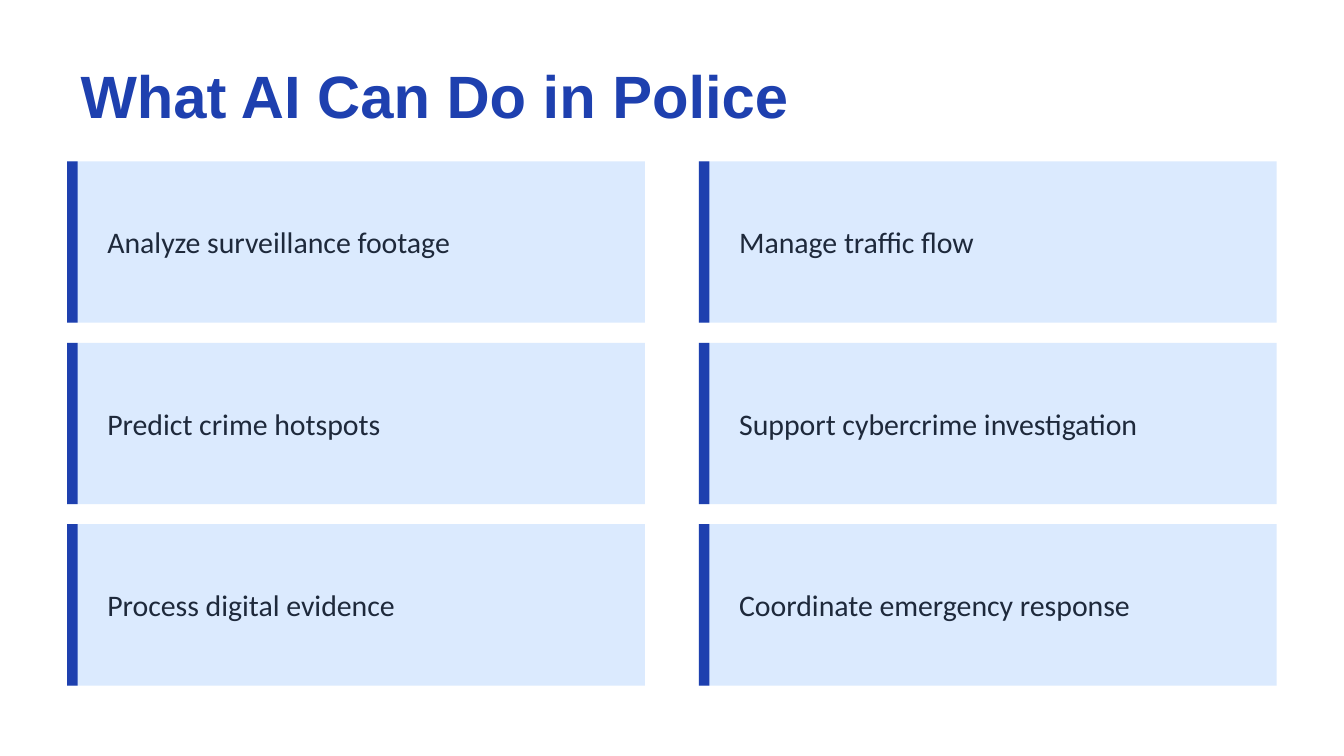
from pptx import Presentation
from pptx.dml.color import RGBColor
from pptx.enum.shapes import MSO_SHAPE as Shape
from pptx.enum.text import MSO_ANCHOR as Anchor, MSO_AUTO_SIZE as AutoSize, PP_ALIGN as Align
from pptx.util import Cm, Pt

# Content: one list per column of cards
TITLE = "What AI Can Do in Police"
COLUMNS = [
    ["Analyze surveillance footage", "Predict crime hotspots", "Process digital evidence"],
    ["Manage traffic flow", "Support cybercrime investigation", "Coordinate emergency response"],
]

# Grid, in centimetres
LEFT, TOP = 1.27, 3.05
CARD_WIDTH, CARD_HEIGHT = 10.92, 3.05
COLUMN_STEP, ROW_STEP = 11.94, 3.43
BAR_WIDTH = 0.2
PADDING_X, PADDING_Y = 0.51, 0.38


def color(hex_value):
    return RGBColor.from_string(hex_value)


def write_text(shape, text, *, font, size, hex_color, bold=False):
    frame = shape.text_frame
    frame.word_wrap = True
    frame.auto_size = AutoSize.NONE
    frame.vertical_anchor = Anchor.MIDDLE
    paragraph = frame.paragraphs[0]
    paragraph.alignment = Align.LEFT
    run = paragraph.add_run()
    run.text = text
    run.font.name = font
    run.font.size = Pt(size)
    run.font.bold = bold
    run.font.color.rgb = color(hex_color)


class SlideBuilder:
    ACCENT, CARD, INK = "1E40AF", "DBEAFE", "1E293B"
    TITLE_FONT, BODY_FONT = "Arial", "Calibri"

    def __init__(self, slide):
        self.slide = slide
        slide.background.fill.solid()
        slide.background.fill.fore_color.rgb = color("FFFFFF")

    def title(self, text):
        shape = self.slide.shapes.title
        shape.left, shape.top = Cm(LEFT), Cm(1.02)
        shape.width, shape.height = Cm(22.86), Cm(1.52)
        write_text(shape, text, font=self.TITLE_FONT, size=32,
                   hex_color=self.ACCENT, bold=True)

    def rectangle(self, left, top, width, height, fill):
        shape = self.slide.shapes.add_shape(
            Shape.RECTANGLE, Cm(left), Cm(top), Cm(width), Cm(height))
        shape.shadow.inherit = False
        shape.fill.solid()
        shape.fill.fore_color.rgb = color(fill)
        shape.line.fill.background()

    def label(self, left, top, width, height, text):
        shape = self.slide.shapes.add_textbox(Cm(left), Cm(top), Cm(width), Cm(height))
        write_text(shape, text, font=self.BODY_FONT, size=16, hex_color=self.INK)

    def card(self, left, top, text):
        self.rectangle(left, top, CARD_WIDTH, CARD_HEIGHT, self.CARD)
        self.rectangle(left, top, BAR_WIDTH, CARD_HEIGHT, self.ACCENT)
        self.label(left + PADDING_X, top + PADDING_Y,
                   CARD_WIDTH - 2 * PADDING_X, CARD_HEIGHT - 2 * PADDING_Y, text)


def main():
    presentation = Presentation()
    presentation.slide_width, presentation.slide_height = Cm(25.4), Cm(14.29)
    title_only = presentation.slide_layouts[5]
    builder = SlideBuilder(presentation.slides.add_slide(title_only))

    # Heading
    builder.title(TITLE)

    # Two columns of cards
    for column, texts in enumerate(COLUMNS):
        for row, text in enumerate(texts):
            builder.card(LEFT + column * COLUMN_STEP, TOP + row * ROW_STEP, text)

    presentation.save("out.pptx")


if __name__ == "__main__":
    main()
